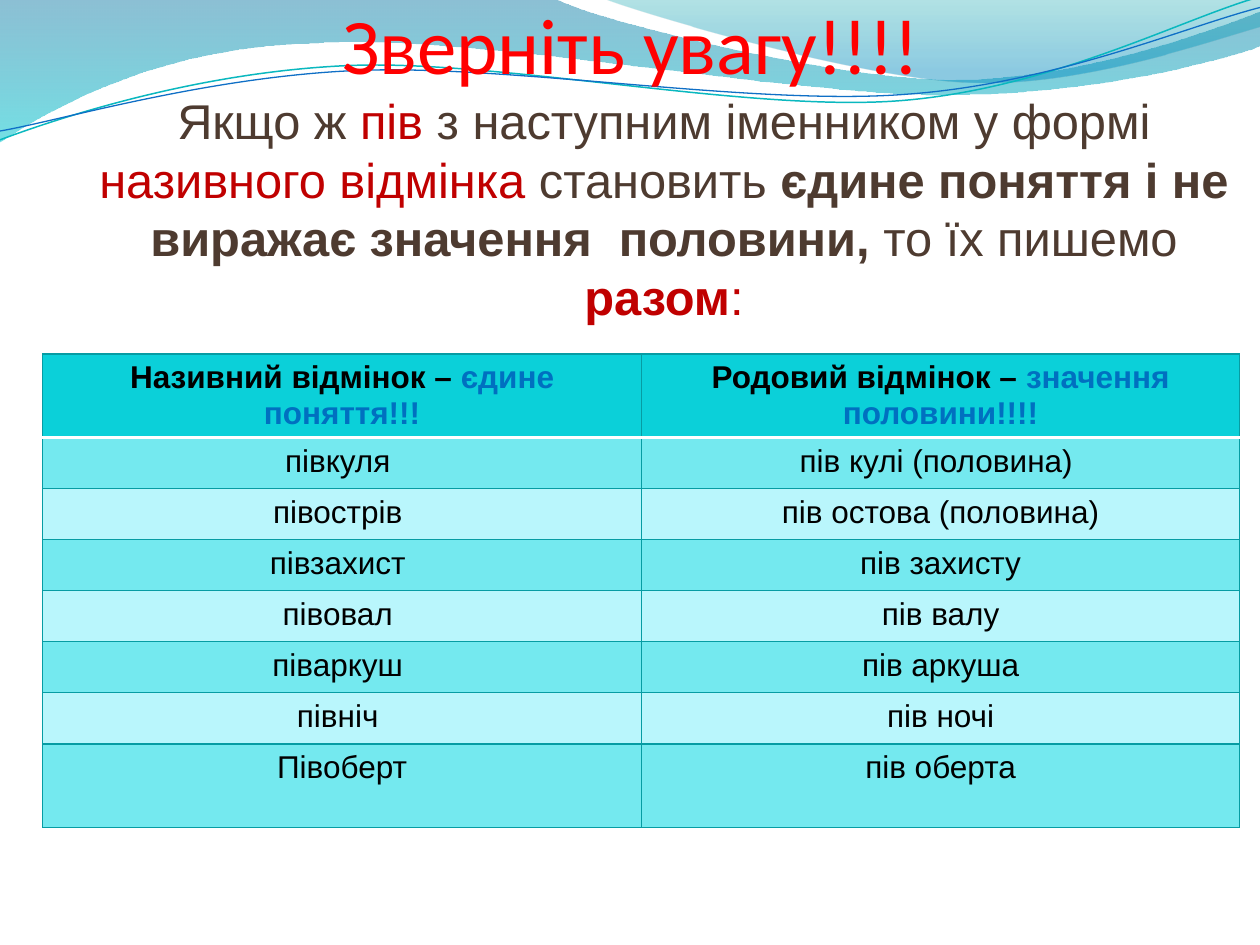
"""Build a Ukrainian spelling slide with wave decorations, a rule and a table."""
import math
import pptx
import pptx.dml.color
import pptx.enum.text
import pptx.oxml
import pptx.oxml.ns
import pptx.util

RGB = pptx.dml.color.RGBColor
RED = RGB(0xFF, 0x00, 0x00)
DARK_RED = RGB(0xC0, 0x00, 0x00)
BROWN = RGB(0x4E, 0x3B, 0x30)
BLACK = RGB(0x00, 0x00, 0x00)
BLUE = RGB(0x00, 0x70, 0xC0)
HEADER = RGB(0x0B, 0xD0, 0xD9)
BAND_DARK = RGB(0x74, 0xE9, 0xEF)
BAND_LIGHT = RGB(0xB9, 0xF6, 0xFC)
GRID = RGB(0x06, 0x9C, 0xA3)
WHITE = RGB(0xFF, 0xFF, 0xFF)
WAVE_BLUE, WAVE_TEAL = RGB(0x00, 0x74, 0xA1), RGB(0x00, 0xC6, 0xCF)
CREST_TEAL, CREST_BLUE = RGB(0x00, 0xA1, 0xA9), RGB(0x00, 0x8B, 0xBF)
LINE_TEAL, LINE_BLUE = RGB(0x0A, 0xB8, 0xBF), RGB(0x0F, 0x6F, 0xC6)
CENTER = pptx.enum.text.PP_ALIGN.CENTER
NS = pptx.oxml.ns.nsdecls("a")
qn = pptx.oxml.ns.qn
TILT = 2.7

prs = pptx.Presentation()
prs.slide_width = pptx.util.Inches(10)
prs.slide_height = pptx.util.Inches(7.5)
U = prs.slide_width // 10
s = prs.slides.add_slide(prs.slide_layouts[6])


def add_run(p, text, size=18, font="Arial", color=BLACK, bold=False):
    r = p.add_run()
    r.text = text
    r.font.size = pptx.util.Pt(size)
    r.font.name = font
    r.font.color.rgb = color
    r.font.bold = bold


def add_curve(segments, close):
    points = [(seg[i] * U, seg[i + 1] * U) for seg in segments for i in range(0, len(seg), 2)]
    builder = s.shapes.build_freeform(*points[0])
    builder.add_line_segments(points[1:], close=close)
    sp = builder.convert_to_shape()
    sp.shadow.inherit = False
    lines = iter(list(sp._element.spPr.iter(qn("a:lnTo"))))
    for seg in segments[1:]:
        group = [next(lines) for _ in range(len(seg) // 2)]
        if len(group) == 3:
            bezier = pptx.oxml.parse_xml(f"<a:cubicBezTo {NS}/>")
            group[0].addprevious(bezier)
            for line in group:
                bezier.append(line[0])
                line.getparent().remove(line)
    return sp


waves = [
    ([(0, 0), (4.4, -0.01), (4.76, 0.17, 6.64, 0.63, 7.58, 0.63),
      (8.53, 0.63, 9.58, 0.26, 10, 0.09), (10.01, 0.36),
      (9.83, 0.44, 8.7, 0.76, 7.46, 0.75), (6.22, 0.75, 3.82, 0.28, 2.57, 0.34),
      (1.29, 0.36, 0.46, 0.83, -0.01, 1.13)],
     [(0, WAVE_BLUE, 45), (1, WAVE_TEAL, 55)]),
    ([(4.79, -0.01), (5.09, 0.11, 6.82, 0.62, 7.69, 0.65),
      (8.56, 0.69, 9.61, 0.32, 10, 0.21), (10, 0)],
     [(0, CREST_TEAL, 30), (0.8, CREST_BLUE, 45)]),
]
for segments, stops in waves:
    sp = add_curve(segments, True)
    sp.line.fill.background()
    sp.fill.gradient()
    sp.fill.gradient_angle = 270
    for stop, (position, color, alpha) in zip(sp.fill.gradient_stops, stops):
        stop.position = position
        stop.color.rgb = color
    for clr, (_, _, alpha) in zip(sp._element.spPr.iter(qn("a:srgbClr")), stops):
        clr.append(pptx.oxml.parse_xml(f'<a:alpha {NS} val="{alpha * 1000}"/>'))

strands = [
    ([(0, 1.11), (0.48, 0.93, 1.58, 0.57, 2.77, 0.52), (3.95, 0.47, 5.93, 0.89, 7.13, 0.8),
      (8.33, 0.71, 9.38, 0.15, 9.98, -0.02)], (4.99, 0.58), LINE_TEAL, 0.85),
    ([(0, 1.04), (0.47, 0.96, 1.64, 0.61, 2.83, 0.56), (4.03, 0.51, 5.97, 0.84, 7.17, 0.75),
      (8.36, 0.67, 9.41, 0.21, 10, 0.06)], (5, 0.59), LINE_BLUE, 0.75),
]
cos, sin = math.cos(math.radians(TILT)), math.sin(math.radians(TILT))
for segments, (cx, cy), color, width in strands:
    level = []
    for seg in segments:
        pts = [(x - cx, y - cy) for x, y in zip(seg[::2], seg[1::2])]
        level.append([v for x, y in pts for v in (cx + x * cos - y * sin, cy + x * sin + y * cos)])
    sp = add_curve(level, False)
    sp.rotation = 360 - TILT
    sp.fill.background()
    sp.line.color.rgb = color
    sp.line.width = pptx.util.Pt(width)

sp = s.shapes.add_textbox(int(0.33 * U), int(0.29 * U), int(9.5 * U), int(2.76 * U))
tf = sp.text_frame
tf.word_wrap = True
tf.vertical_anchor = pptx.enum.text.MSO_ANCHOR.BOTTOM
tf.margin_left = tf.margin_right = 0
tf.margin_top = int(0.05 * U)
tf.margin_bottom = int(0.47 * U)
p = tf.paragraphs[0]
p.alignment = CENTER
pPr = p._p.get_or_add_pPr()
pPr.set("marL", str(int(0.38 * U)))
pPr.set("indent", str(int(-0.38 * U)))
add_run(p, "Зверніть увагу!!!! ", size=45, font="Calibri", color=RED)
p.add_line_break()
for text, color, bold in [
    ("Якщо ж ", BROWN, False),
    ("пів", DARK_RED, False),
    (" з наступним іменником у формі ", BROWN, False),
    ("називного відмінка ", DARK_RED, False),
    ("становить ", BROWN, False),
    ("єдине поняття і не виражає значення  половини, ", BROWN, True),
    ("то їх пишемо ", BROWN, False),
    ("разом", DARK_RED, True),
    (":", DARK_RED, False),
]:
    add_run(p, text, size=27.9, color=color, bold=bold)

headings = [("Називний відмінок – ", "єдине поняття!!!"),
            ("Родовий відмінок – ", "значення половини!!!!")]
pairs = [
    ("півкуля ", "пів кулі (половина) "),
    ("півострів ", "пів остова (половина)"),
    ("півзахист ", "пів захисту"),
    ("півовал ", "пів валу"),
    ("піваркуш ", "пів аркуша"),
    ("північ ", "пів ночі"),
    ("Півоберт", "пів оберта"),
]
rows = [headings] + [[(text,) for text in pair] for pair in pairs]
table = s.shapes.add_table(len(rows), 2, int(0.34 * U), int(2.81 * U),
                           int(9.5 * U), int(3.76 * U)).table
for column in table.columns:
    column.width = int(4.75 * U)
for i, row in enumerate(rows):
    table.rows[i].height = int((0.66 if i in (0, len(rows) - 1) else 0.406) * U)
    for j, parts in enumerate(row):
        cell = table.cell(i, j)
        if i == 0:
            cell.margin_bottom = 0
        p = cell.text_frame.paragraphs[0]
        p.alignment = CENTER
        for text, color in zip(parts, (BLACK, BLUE)):
            add_run(p, text, color=color, bold=i == 0)
        tcPr = cell._tc.get_or_add_tcPr()
        for side in "LRTB":
            divider = (i, side) in ((0, "B"), (1, "T"))
            color, width = (WHITE, 2) if divider else (GRID, 0.75)
            tcPr.append(pptx.oxml.parse_xml(
                f'<a:ln{side} {NS} w="{int(pptx.util.Pt(width))}">'
                f'<a:solidFill><a:srgbClr val="{color}"/></a:solidFill></a:ln{side}>'))
        cell.fill.solid()
        cell.fill.fore_color.rgb = HEADER if i == 0 else (BAND_LIGHT, BAND_DARK)[i % 2]

prs.save("out.pptx")
